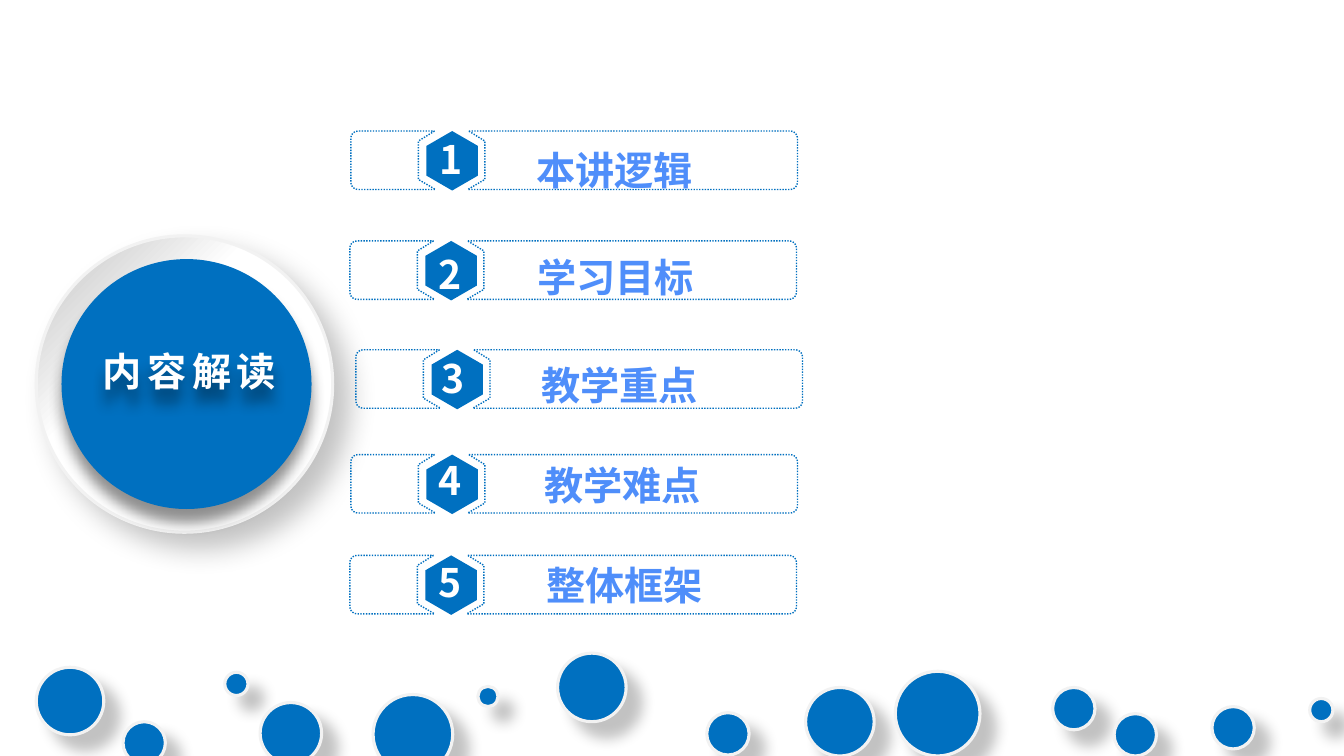
import math
from dataclasses import dataclass

import pptx
import pptx.dml.color
import pptx.enum.dml
import pptx.enum.shapes
import pptx.enum.text
import pptx.oxml
import pptx.oxml.ns
import pptx.util
from pptx.util import Inches

BLUE, LABEL_BLUE, WHITE, RIM = "0070C0", "4F8EFA", "FFFFFF", "F2F2F2"
LATIN, CJK = "Arial", "Noto Sans CJK SC"
FRAME_W, FRAME_H, CORNER = 4.43, 0.58, 0.07
HEX_W, HEX_H = 0.51, 0.59
TEXT_H = 0.57

Points = list[tuple[float, float]]


@dataclass
class Shadow:
    alpha: int
    blur: float
    distance: float
    angle: int


@dataclass
class Bubble:
    left: float
    top: float
    size: float


@dataclass
class Item:
    left: float
    top: float
    number_left: float
    number_top: float
    label: str
    label_left: float
    label_top: float


BUBBLE_SHADOW = Shadow(23, 10, 15, 45)
RING_SHADOW = Shadow(23, 20, 15, 45)
DISC_SHADOW = Shadow(43, 10, 10, 90)

BUBBLES = [
    Bubble(0.36, 6.62, 0.67), Bubble(1.22, 7.16, 0.42), Bubble(2.23, 6.67, 0.23),
    Bubble(2.58, 6.97, 0.61), Bubble(3.7, 6.89, 0.79), Bubble(4.74, 6.81, 0.2),
    Bubble(5.53, 6.48, 0.68), Bubble(7.01, 7.07, 0.42), Bubble(7.99, 6.82, 0.68),
    Bubble(8.88, 6.66, 0.84), Bubble(10.44, 6.82, 0.42), Bubble(11.05, 7.08, 0.42),
    Bubble(12.02, 7.01, 0.42), Bubble(12.99, 6.93, 0.23),
]

ITEMS = [
    Item(3.48, 1.3, 4.26, 1.29, "本讲逻辑", 5.22, 1.4),
    Item(3.47, 2.39, 4.25, 2.43, "学习目标", 5.23, 2.46),
    Item(3.53, 3.47, 4.28, 3.47, "教学重点", 5.27, 3.54),
    Item(3.48, 4.51, 4.25, 4.48, "教学难点", 5.3, 4.53),
    Item(3.47, 5.51, 4.25, 5.49, "整体框架", 5.32, 5.52),
]


def rgb(value: str) -> pptx.dml.color.RGBColor:
    return pptx.dml.color.RGBColor.from_string(value)


def set_shadow(sp, shadow: Shadow) -> None:
    sp.shadow.inherit = False
    effects = sp._element.spPr.find(pptx.oxml.ns.qn("a:effectLst"))
    effects.append(pptx.oxml.parse_xml(
        f'<a:outerShdw {pptx.oxml.ns.nsdecls("a")} blurRad="{pptx.util.Pt(shadow.blur)}" '
        f'dist="{pptx.util.Pt(shadow.distance)}" dir="{shadow.angle * 60000}" '
        f'algn="ctr" rotWithShape="0"><a:srgbClr val="000000">'
        f'<a:alpha val="{shadow.alpha * 1000}"/></a:srgbClr></a:outerShdw>'))


def add_circle(shapes, b: Bubble, shadow: Shadow, rim: bool = True):
    sp = shapes.add_shape(pptx.enum.shapes.MSO_SHAPE.OVAL, Inches(b.left), Inches(b.top),
                          Inches(b.size), Inches(b.size))
    sp.fill.solid()
    sp.fill.fore_color.rgb = rgb(BLUE)
    if rim:
        sp.line.color.rgb = rgb(RIM)
        sp.line.width = pptx.util.Pt(2.25)
    else:
        sp.line.fill.background()
    set_shadow(sp, shadow)
    return sp


def add_text(shapes, text: str, left: float, top: float, width: float,
             color: str, font: str = LATIN, wrap: bool = False, spacing: float = 0):
    sp = shapes.add_textbox(Inches(left), Inches(top), Inches(width), Inches(TEXT_H))
    tf = sp.text_frame
    tf.word_wrap = wrap
    tf.auto_size = pptx.enum.text.MSO_AUTO_SIZE.SHAPE_TO_FIT_TEXT
    p = tf.paragraphs[0]
    p.text = text
    p.font.size = pptx.util.Pt(28)
    p.font.bold = True
    p.font.name = font
    p.font.color.rgb = rgb(color)
    props = p._p.pPr.find(pptx.oxml.ns.qn("a:defRPr"))
    props.append(pptx.oxml.parse_xml(
        f'<a:ea {pptx.oxml.ns.nsdecls("a")} typeface="{CJK}"/>'))
    if spacing:
        props.set("spc", str(int(spacing * 100)))
    return sp


def arc(cx: float, cy: float, start: int) -> Points:
    """Quarter circle, clockwise on the slide, in four steps."""
    angles = [math.radians(start + 22.5 * i) for i in range(5)]
    return [(cx + CORNER * math.cos(a), cy + CORNER * math.sin(a)) for a in angles]


def add_outline(shapes, contours: list[Points], left: float, top: float):
    moved = [[(Inches(left + x), Inches(top + y)) for x, y in c] for c in contours]
    builder = shapes.build_freeform(*moved[0][0])
    for i, contour in enumerate(moved):
        if i:
            builder.move_to(*contour[0])
        builder.add_line_segments(contour[1:], close=True)
    sp = builder.convert_to_shape()
    sp.shadow.inherit = False
    return sp


def frame_contours() -> list[Points]:
    right, low = FRAME_W - CORNER, FRAME_H - CORNER
    left_part = ([(0.83, 0), (0.67, 0.1), (0.67, 0.48), (0.84, FRAME_H)]
                 + arc(CORNER, low, 90) + arc(CORNER, CORNER, 180))
    right_part = ([(1.17, 0)] + arc(right, CORNER, 270) + arc(right, low, 0)
                  + [(1.16, FRAME_H), (1.33, 0.48), (1.33, 0.1)])
    return [left_part, right_part]


def add_item(shapes, item: Item, number: int) -> None:
    group = shapes.add_group_shape().shapes
    frame = add_outline(group, frame_contours(), item.left, item.top)
    frame.fill.background()
    frame.line.color.rgb = rgb(BLUE)
    frame.line.width = pptx.util.Pt(1)
    frame.line.dash_style = pptx.enum.dml.MSO_LINE.ROUND_DOT

    corners = [(HEX_W / 2, 0), (HEX_W, HEX_H / 4), (HEX_W, HEX_H * 3 / 4),
               (HEX_W / 2, HEX_H), (0, HEX_H * 3 / 4), (0, HEX_H / 4)]
    hexagon = add_outline(group, [corners], item.left + 0.75, item.top)
    hexagon.fill.solid()
    hexagon.fill.fore_color.rgb = rgb(BLUE)
    hexagon.line.fill.background()

    add_text(group, str(number), item.number_left, item.number_top, 0.7, WHITE, CJK, wrap=True)
    add_text(shapes, item.label, item.label_left, item.label_top, 1.76, LABEL_BLUE)


def main() -> None:
    prs = pptx.Presentation()
    prs.slide_width, prs.slide_height = Inches(13.33), Inches(7.5)
    shapes = prs.slides.add_slide(prs.slide_layouts[6]).shapes

    # Bubbles along the bottom
    for bubble in BUBBLES:
        add_circle(shapes, bubble, BUBBLE_SHADOW)

    # Title disc in its ring
    ring = add_circle(shapes, Bubble(0.36, 2.34, 2.94), RING_SHADOW)
    ring.fill.gradient()
    ring.fill.gradient_angle = 315
    for stop, position, color in zip(ring.fill.gradient_stops, (0, 0.37), ("BFBFBF", WHITE)):
        stop.position = position
        stop.color.rgb = rgb(color)
    add_circle(shapes, Bubble(0.61, 2.57, 2.48), DISC_SHADOW, rim=False)
    title = add_text(shapes, "内容解读", 0.92, 3.4, 2, WHITE, spacing=4)
    set_shadow(title, DISC_SHADOW)

    # Numbered contents
    for number, item in enumerate(ITEMS, 1):
        add_item(shapes, item, number)

    prs.save("out.pptx")


if __name__ == "__main__":
    main()
